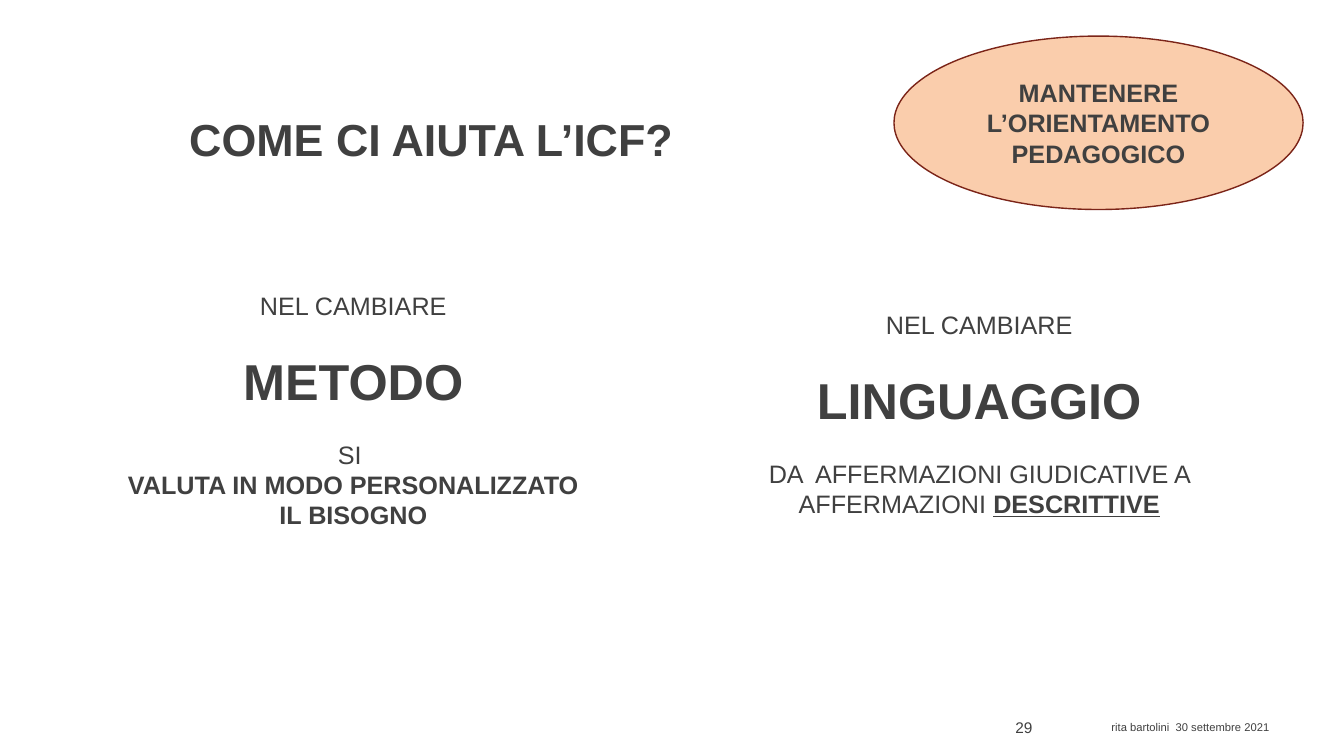
from pptx import Presentation
from pptx.dml.color import RGBColor
from pptx.enum import shapes, text
from pptx.util import Cm, Pt

THEME = {
    "font": "Arial", "ink": "404040", "accent": "FACDAC", "outline": "7B2418",
    "title": 32, "keyword": 36, "body": 18, "number": 11, "footer": 8,
    "gap": 20.7,
}

TITLE = "COME CI AIUTA L’ICF?"
GOAL = "MANTENERE L’ORIENTAMENTO PEDAGOGICO"
NUMBER = "29"
FOOTER = "rita bartolini  30 settembre 2021"
CHANGES = [
    {
        "box": (2.11, 4.95, 13.59, 10.77),
        "intro": "NEL CAMBIARE",
        "keyword": "METODO",
        "result": [[("SI ", "")], [("VALUTA IN MODO PERSONALIZZATO IL BISOGNO", "b")]],
    },
    {
        "box": (18.01, 5.33, 13.34, 10.21),
        "intro": "NEL CAMBIARE",
        "keyword": "LINGUAGGIO",
        "result": [[("DA  AFFERMAZIONI GIUDICATIVE A AFFERMAZIONI ", ""), ("DESCRITTIVE", "bu")]],
    },
]

LEFT, CENTER, RIGHT = text.PP_ALIGN.LEFT, text.PP_ALIGN.CENTER, text.PP_ALIGN.RIGHT
TOP, MIDDLE, BOTTOM = text.MSO_ANCHOR.TOP, text.MSO_ANCHOR.MIDDLE, text.MSO_ANCHOR.BOTTOM


def color(name):
    return RGBColor.from_string(THEME[name])


def write(frame, lines, anchor=MIDDLE, align=CENTER):
    frame.word_wrap = True
    frame.vertical_anchor = anchor
    for index, (parts, size, before) in enumerate(lines):
        paragraph = frame.paragraphs[0] if index == 0 else frame.add_paragraph()
        paragraph.alignment = align
        paragraph.space_before = Pt(before)
        paragraph.font.name = THEME["font"]
        paragraph.font.size = Pt(THEME[size])
        paragraph.font.color.rgb = color("ink")
        for words, marks in parts:
            run = paragraph.add_run()
            run.text = words
            run.font.bold = "b" in marks
            run.font.underline = "u" in marks


def add_label(slide, box, words, size, marks="", anchor=MIDDLE, align=CENTER):
    label = slide.shapes.add_textbox(*map(Cm, box))
    write(label.text_frame, [([(words, marks)], size, 0)], anchor, align)
    return label


def add_panel(slide, preset, box, lines):
    panel = slide.shapes.add_shape(preset, *map(Cm, box))
    panel.shadow.inherit = False
    panel.fill.background()
    panel.line.fill.background()
    write(panel.text_frame, lines)
    return panel


def main():
    deck = Presentation()
    deck.slide_width, deck.slide_height = Cm(33.87), Cm(19.05)
    slide = deck.slides.add_slide(deck.slide_layouts[6])

    title = add_label(slide, (0, 1.52, 21.74, 2.79), TITLE, "title", "b", BOTTOM)
    title.text_frame.paragraphs[0].line_spacing = 0.9
    add_label(slide, (23.93, 17.83, 2.34, 1.02), NUMBER, "number", align=RIGHT)

    for change in CHANGES:
        gap = THEME["gap"]
        lines = [
            ([(change["intro"], "")], "body", 0),
            ([(change["keyword"], "b")], "keyword", gap),
        ]
        for index, parts in enumerate(change["result"]):
            lines.append((parts, "body", gap if index == 0 else 0))
        add_panel(slide, shapes.MSO_SHAPE.ROUNDED_RECTANGLE, change["box"], lines)

    goal = add_panel(slide, shapes.MSO_SHAPE.OVAL, (22.53, 0.91, 10.31, 4.37),
                     [([(GOAL, "b")], "body", 0)])
    goal.fill.solid()
    goal.fill.fore_color.rgb = color("accent")
    goal.line.color.rgb = color("outline")
    goal.line.width = Pt(1)

    add_label(slide, (27.76, 18.03, 6.1, 1.02), FOOTER, "footer", anchor=TOP, align=LEFT)
    deck.save("out.pptx")


if __name__ == "__main__":
    main()
